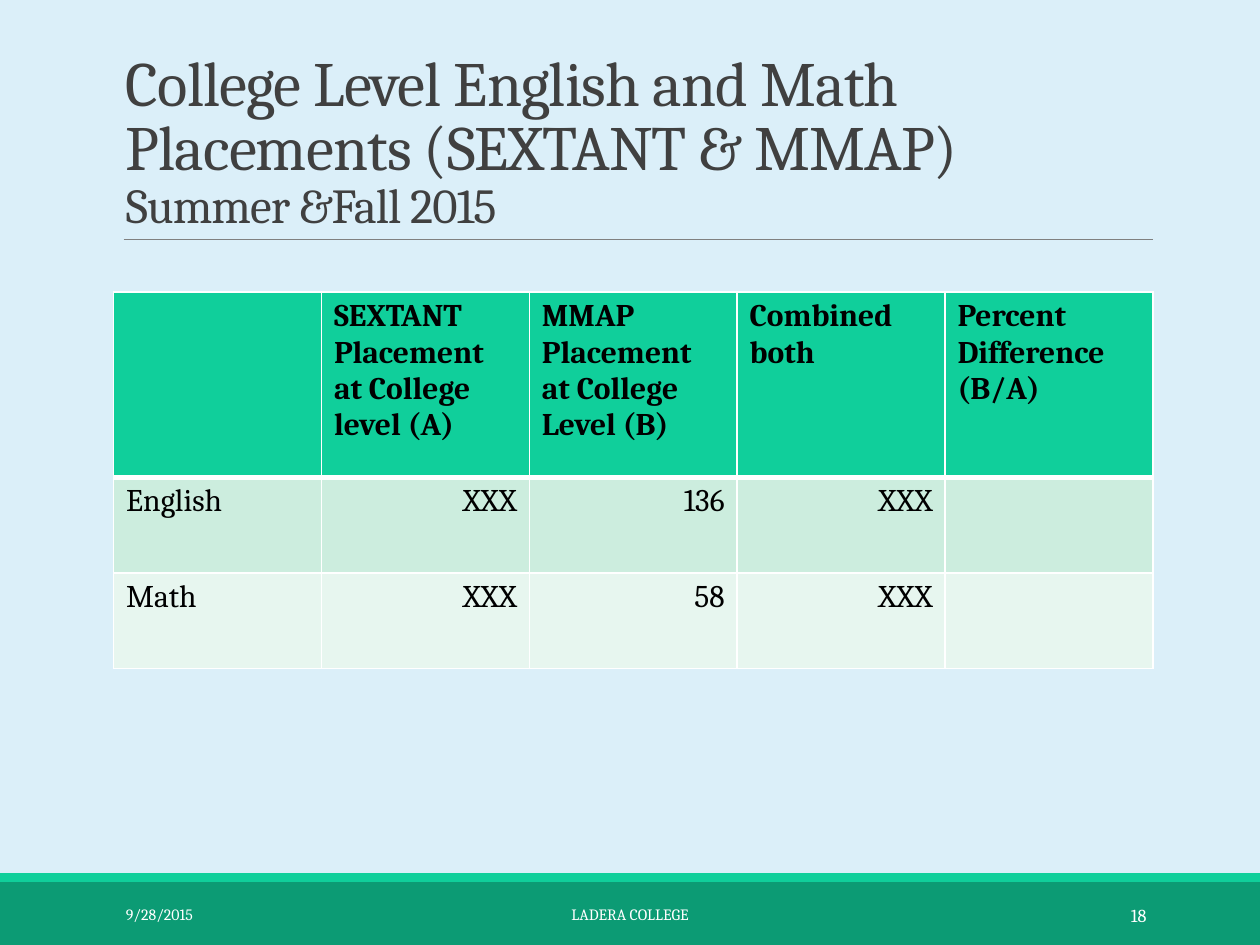
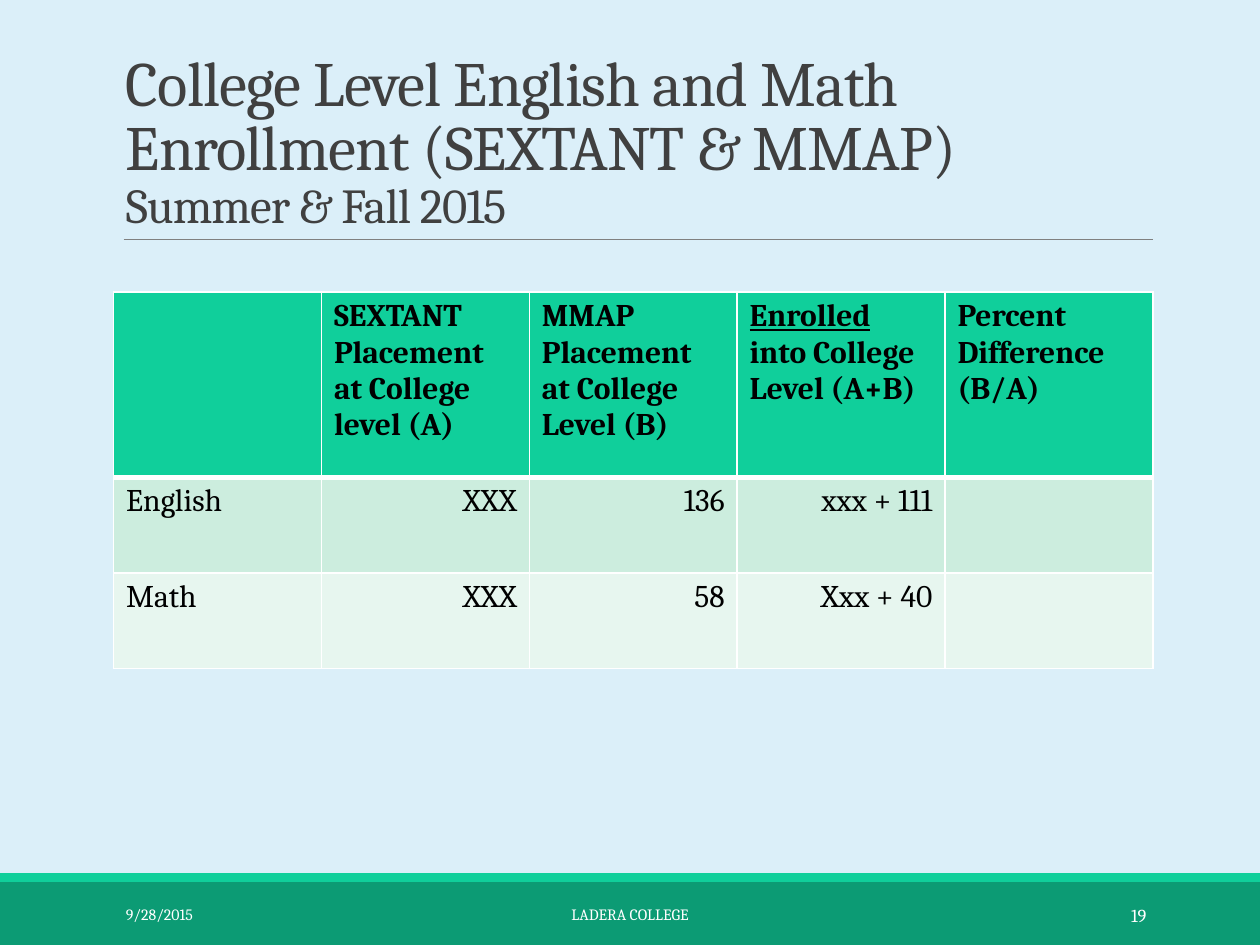
"""Build two slides on college level placements and enrollment."""
from lxml.etree import SubElement
from pptx import Presentation
from pptx.dml.color import RGBColor as RGB
from pptx.enum.shapes import MSO_CONNECTOR as CONN, MSO_SHAPE as SHAPE
from pptx.enum.text import MSO_ANCHOR as ANCHOR, PP_ALIGN as ALIGN
from pptx.oxml.ns import qn
from pptx.util import Cm, Pt

COLORS = {
    "background": "DBEFF9", "band": "0C9B74", "accent": "10CF9B", "rule": "808080",
    "title": "404040", "white": "FFFFFF", "black": "000000",
    "odd": "CCEDDE", "even": "E7F6EF",
}
LEFT, WIDTH = 2.29, 20.96
COLUMN = 4.19
ROWS = [3.73, 1.93, 1.93]
ROW_FILLS = ["accent", "odd", "even"]
BANDS = [("band", 17.78, 1.27), ("accent", 17.6, 0.18)]
HEADERS = ["", "SEXTANT Placement at College level (A)", "MMAP Placement at College Level (B)"]
LAST_HEADER = "Percent Difference (B/A)"

SLIDES = [
    {
        "number": "18",
        "title": "College Level English and Math Placements (SEXTANT & MMAP)",
        "term": "Summer &Fall 2015",
        "rows": [
            [*HEADERS, "Combined both", LAST_HEADER],
            ["English", "XXX", "136", "XXX", ""],
            ["Math", "XXX", "58", "XXX", ""],
        ],
        "underlined": "",
    },
    {
        "number": "19",
        "title": "College Level English and Math Enrollment (SEXTANT & MMAP)",
        "term": "Summer & Fall 2015",
        "rows": [
            [*HEADERS, "Enrolled into College Level (A+B)", LAST_HEADER],
            ["English", "XXX", "136", "xxx + 111", ""],
            ["Math", "XXX", "58", "Xxx + 40", ""],
        ],
        "underlined": "Enrolled",
    },
]


def add_run(p, text, size, color):
    r = p.add_run()
    r.text = text
    r.font.name = "Cambria"
    r.font.size = Pt(size)
    r.font.color.rgb = RGB.from_string(COLORS[color])
    return r


def add_box(s, left, top, width, height, anchor):
    tf = s.shapes.add_textbox(Cm(left), Cm(top), Cm(width), Cm(height)).text_frame
    tf.word_wrap = True
    tf.vertical_anchor = anchor
    return tf.paragraphs[0]


prs = Presentation()
prs.slide_width, prs.slide_height = Cm(25.4), Cm(19.05)

for content in SLIDES:
    s = prs.slides.add_slide(prs.slide_layouts[6])
    s.background.fill.solid()
    s.background.fill.fore_color.rgb = RGB.from_string(COLORS["background"])

    for color, top, height in BANDS:
        sp = s.shapes.add_shape(SHAPE.RECTANGLE, 0, Cm(top), prs.slide_width, Cm(height))
        sp.shadow.inherit = False
        sp.fill.solid()
        sp.fill.fore_color.rgb = RGB.from_string(COLORS[color])
        sp.line.fill.background()

    rule = s.shapes.add_connector(CONN.STRAIGHT, Cm(2.49), Cm(4.83), Cm(23.24), Cm(4.83))
    rule.line.color.rgb = RGB.from_string(COLORS["rule"])
    rule.line.width = Pt(0.5)
    SubElement(rule._element.spPr, qn("a:effectLst"))

    p = add_box(s, LEFT, 0.79, WIDTH, 4.04, ANCHOR.BOTTOM)
    p.line_spacing = 0.85
    title = add_run(p, content["title"], 36, "title")
    p.add_line_break()
    term = add_run(p, content["term"], 27.9, "title")
    for r in (title, term):
        r.font._element.set("spc", "-50")

    for text, left, width, size, align in [
        ("9/28/2015", LEFT, 5.16, 9, ALIGN.LEFT),
        ("LADERA COLLEGE", 7.67, 10.06, 9, ALIGN.CENTER),
        (content["number"], 20.62, 2.74, 10.5, ALIGN.RIGHT),
    ]:
        p = add_box(s, left, 17.93, width, 1.02, ANCHOR.MIDDLE)
        p.alignment = align
        add_run(p, text, size, "white")

    table = s.shapes.add_table(3, 5, Cm(LEFT), Cm(5.89), Cm(WIDTH), Cm(sum(ROWS))).table
    for column in table.columns:
        column.width = Cm(COLUMN)
    for i, texts in enumerate(content["rows"]):
        table.rows[i].height = Cm(ROWS[i])
        for j, text in enumerate(texts):
            cell = table.cell(i, j)
            tcPr = cell._tc.get_or_add_tcPr()
            for side in "LRTB":
                thick = (i, side) in [(0, "B"), (1, "T")]
                ln = SubElement(tcPr, qn(f"a:ln{side}"), w=str(Pt(3 if thick else 1)))
                fill = SubElement(ln, qn("a:solidFill"))
                SubElement(fill, qn("a:srgbClr"), val=COLORS["white"])
            cell.fill.solid()
            cell.fill.fore_color.rgb = RGB.from_string(COLORS[ROW_FILLS[i]])

            p = cell.text_frame.paragraphs[0]
            p.alignment = ALIGN.RIGHT if i and j else ALIGN.LEFT
            marked = content["underlined"]
            parts = [text]
            if marked and text.startswith(marked):
                parts = [marked, text.removeprefix(marked)]
            for part in filter(None, parts):
                r = add_run(p, part, 18, "black")
                r.font.bold = i == 0
                r.font.underline = part == marked

prs.save("out.pptx")
